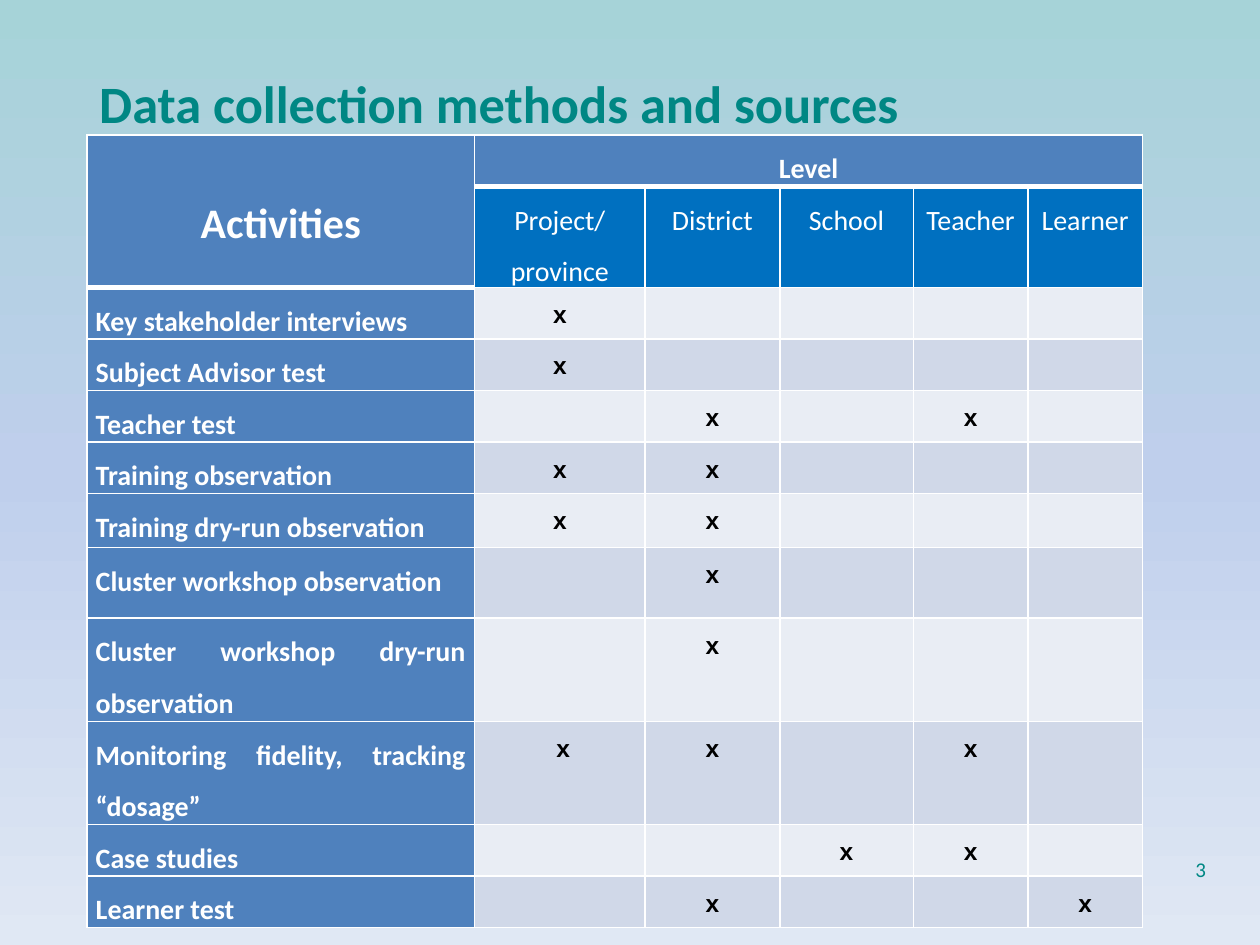
from copy import deepcopy

from lxml.etree import SubElement
from pptx import Presentation
from pptx.dml.color import RGBColor
from pptx.enum.text import MSO_ANCHOR as ANCHOR, MSO_AUTO_SIZE as AUTO, PP_ALIGN as ALIGN
from pptx.oxml.ns import qn
from pptx.util import Cm, Pt

COLORS = {
    "sky": "A6D3D8", "haze": "BFCFEC", "mist": "E0E8F4",
    "teal": "008784", "header": "4F81BD", "level": "0070C0",
    "light": "E9EDF4", "dark": "D0D8E8", "white": "FFFFFF", "black": "000000",
}
LEVELS = ["Project/ province", "District", "School", "Teacher", "Learner"]
# Activity and its marks by column
ACTIVITIES = [
    ("Key stakeholder interviews", {1: "x"}),
    ("Subject Advisor test", {1: "x"}),
    ("Teacher test", {2: "x", 4: "x"}),
    ("Training observation", {1: "x", 2: "x"}),
    ("Training dry-run observation", {1: "x", 2: "x"}),
    ("Cluster workshop observation", {2: "x"}),
    ("Cluster workshop dry-run observation", {2: "x"}),
    ("Monitoring fidelity, tracking “dosage”", {1: " x", 2: "x", 4: "x"}),
    ("Case studies", {3: "x", 4: "x"}),
    ("Learner test", {2: "x", 5: "x"}),
]
COL_WIDTHS = [7.82, 3.43, 2.72, 2.69, 2.31, 2.31]
ROW_HEIGHTS = [1.04, 1.98] + [1.04] * 4 + [1.09, 1.42, 2.08, 2.08, 1.04, 1.04]


def rgb(name):
    return RGBColor.from_string(COLORS[name])


def write(tf, text, size=16, color="white", bold=False, font="Calibri",
          align=ALIGN.CENTER, spacing=None):
    p = tf.paragraphs[0]
    p.alignment = align
    p.line_spacing = spacing
    p.font.size = Pt(size)
    if text:
        r = p.add_run()
        r.text = text
        r.font.size = Pt(size)
        r.font.name = font
        r.font.bold = bold
        r.font.color.rgb = rgb(color)


def set_margins(tf, side, top):
    tf.margin_left = tf.margin_right = Cm(side)
    tf.margin_top = tf.margin_bottom = Cm(top)


def set_background(s):
    fill = s.background.fill
    fill.gradient()
    fill.gradient_angle = 270
    stops = s._element.find(".//" + qn("a:gsLst"))
    stops.insert(1, deepcopy(stops[0]))
    names = ["sky", "haze", "mist"]
    for stop, name, position in zip(fill.gradient_stops, names, [0, 0.5, 1]):
        stop.color.rgb = rgb(name)
        stop.position = position


def add_title(s, text):
    sp = s.shapes.title
    sp.left, sp.top, sp.width, sp.height = Cm(1.75), Cm(1.19), Cm(22.86), Cm(1.55)
    tf = sp.text_frame
    tf.auto_size = AUTO.NONE
    tf.vertical_anchor = ANCHOR.TOP
    set_margins(tf, 0.25, 0.25)
    write(tf, text, size=30, color="teal", bold=True, align=ALIGN.LEFT)


def add_page_number(s, text):
    tf = s.shapes.add_textbox(Cm(18.64), Cm(17.15), Cm(5.92), Cm(0.76)).text_frame
    tf.word_wrap = True
    tf.vertical_anchor = ANCHOR.MIDDLE
    set_margins(tf, 0.25, 0.13)
    write(tf, text, size=12, color="teal", align=ALIGN.RIGHT)


def set_borders(cell, top, bottom):
    tcPr = cell._tc.get_or_add_tcPr()
    for side, width in (("L", 1), ("R", 1), ("T", top), ("B", bottom)):
        ln = SubElement(tcPr, qn(f"a:ln{side}"), w=str(Pt(width)))
        fill = SubElement(ln, qn("a:solidFill"))
        SubElement(fill, qn("a:srgbClr"), val=COLORS["white"])


def fill_cell(cell, text, fill, **style):
    cell.margin_left = cell.margin_right = Cm(0.18)
    cell.margin_top = cell.margin_bottom = 0
    cell.fill.solid()
    cell.fill.fore_color.rgb = rgb(fill)
    write(cell.text_frame, text, spacing=1.5, **style)


def add_activity_table(s):
    frame = s.shapes.add_table(len(ROW_HEIGHTS), len(COL_WIDTHS), Cm(1.75), Cm(2.72),
                               Cm(sum(COL_WIDTHS)), Cm(sum(ROW_HEIGHTS)))
    table = frame.table
    table.first_row = table.horz_banding = False
    for col, width in zip(table.columns, COL_WIDTHS):
        col.width = Cm(width)
    for row, height in zip(table.rows, ROW_HEIGHTS):
        row.height = Cm(height)

    # Thick rules under the two merged headers
    for i in range(len(ROW_HEIGHTS)):
        for j in range(len(COL_WIDTHS)):
            last = 1 if j == 0 else 0
            thick_bottom = i == last or (i, j) == (0, 0)
            set_borders(table.cell(i, j), 3 if i == last + 1 else 1,
                        3 if thick_bottom else 1)

    # Header rows
    table.cell(0, 0).merge(table.cell(1, 0))
    table.cell(0, 1).merge(table.cell(0, len(LEVELS)))
    fill_cell(table.cell(0, 0), "Activities", "header", size=24, bold=True)
    table.cell(0, 0).vertical_anchor = ANCHOR.MIDDLE
    fill_cell(table.cell(0, 1), "Level", "header", bold=True)
    for j, level in enumerate(LEVELS, 1):
        fill_cell(table.cell(1, j), level, "level")

    # Activity rows
    for i, (activity, marks) in enumerate(ACTIVITIES, 2):
        fill_cell(table.cell(i, 0), activity, "header", bold=True, align=ALIGN.JUSTIFY)
        for j in range(1, len(COL_WIDTHS)):
            fill_cell(table.cell(i, j), marks.get(j, ""), "dark" if i % 2 else "light",
                      size=14, color="black", bold=True, font="Arial")


def main():
    prs = Presentation()
    prs.slide_width, prs.slide_height = Cm(25.4), Cm(19.05)
    s = prs.slides.add_slide(prs.slide_layouts[5])
    set_background(s)
    add_title(s, "Data collection methods and sources")
    add_page_number(s, "3")
    add_activity_table(s)
    prs.save("out.pptx")


if __name__ == "__main__":
    main()
